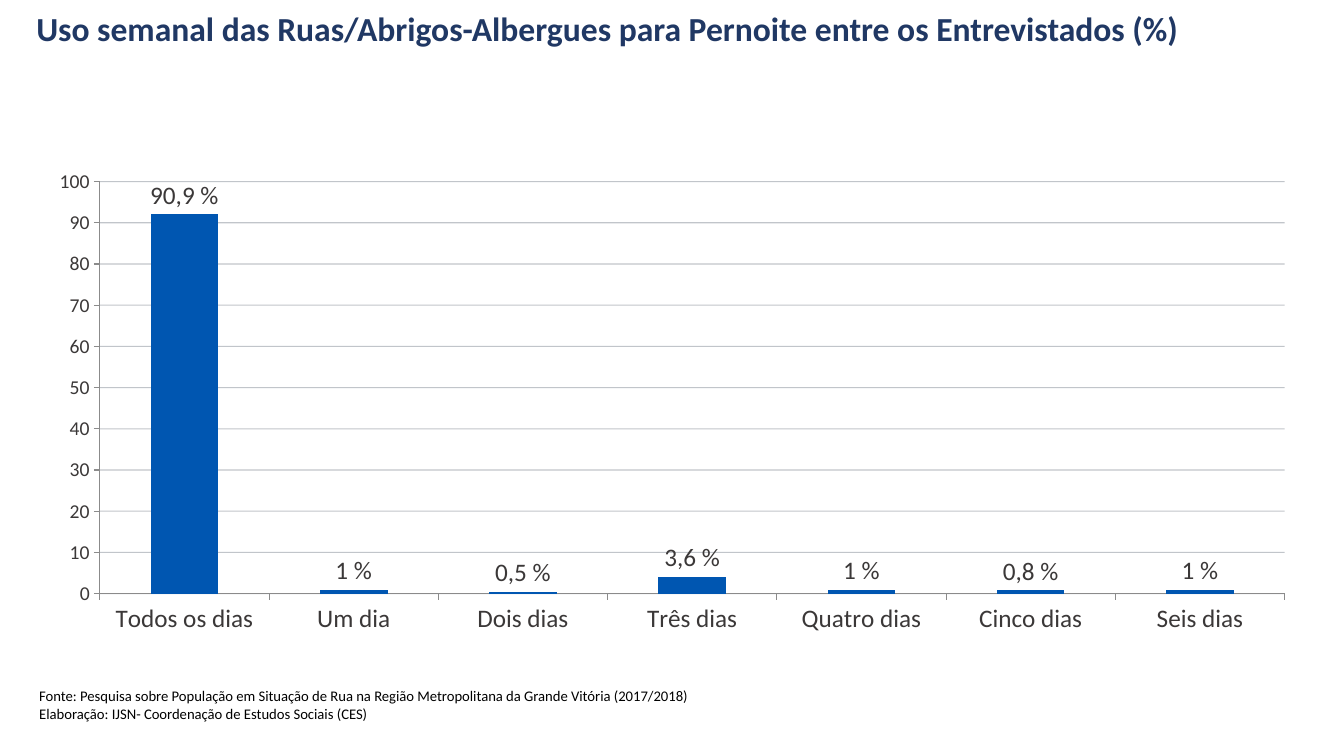
from lxml import etree
from pptx import Presentation
from pptx.chart.data import CategoryChartData
from pptx.dml.color import RGBColor
from pptx.enum.chart import XL_CHART_TYPE, XL_LABEL_POSITION, XL_TICK_MARK
from pptx.enum.text import MSO_ANCHOR, PP_ALIGN
from pptx.oxml import parse_xml
from pptx.oxml.ns import nsdecls, qn
from pptx.util import Cm, Pt

COLUMN_CLUSTERED = XL_CHART_TYPE.COLUMN_CLUSTERED
OUTSIDE_END = XL_LABEL_POSITION.OUTSIDE_END
TICK_OUTSIDE = XL_TICK_MARK.OUTSIDE
TICK_NONE = XL_TICK_MARK.NONE
ANCHOR_MIDDLE = MSO_ANCHOR.MIDDLE
ANCHOR_BOTTOM = MSO_ANCHOR.BOTTOM
ALIGN_LEFT = PP_ALIGN.LEFT

FONT_NAME = "Calibri"
NAVY = "203864"
BLUE = "0056B1"
BLACK = "000000"
DARK_GRAY = "3B3838"
AXIS_GRAY = "8B8B8B"
GRID_SLATE = "333F50"

DAYS = [
    ("Todos os dias", 92, "90,9 %"),
    ("Um dia", 1, "1 %"),
    ("Dois dias", 0.5, "0,5 %"),
    ("Três dias", 4, "3,6 %"),
    ("Quatro dias", 1, "1 %"),
    ("Cinco dias", 0.8, "0,8 %"),
    ("Seis dias", 1, "1 %"),
]
SOURCE_LINES = [
    "Fonte: Pesquisa sobre População em Situação de Rua na Região Metropolitana da Grande Vitória (2017/2018)",
    "Elaboração: IJSN- Coordenação de Estudos Sociais (CES)",
]
PLOT_LAYOUT = {"x": 0.052, "y": 0.044, "w": 0.927, "h": 0.852}


def color(hex_value):
    return RGBColor.from_string(hex_value)


def format_font(font, size, hex_value, bold=False):
    font.name = FONT_NAME
    font.size = Pt(size)
    font.bold = bold
    font.color.rgb = color(hex_value)


presentation = Presentation()
presentation.slide_width = Cm(33.87)
presentation.slide_height = Cm(19.05)
slide = presentation.slides.add_slide(presentation.slide_layouts[5])

title = slide.shapes.title
title.left, title.top, title.width, title.height = Cm(0.66), Cm(0.02), Cm(32.31), Cm(1.57)
title.text_frame.text = "Uso semanal das Ruas/Abrigos-Albergues para Pernoite entre os Entrevistados (%)"
title.text_frame.vertical_anchor = ANCHOR_MIDDLE
title_paragraph = title.text_frame.paragraphs[0]
title_paragraph.alignment = ALIGN_LEFT
title_paragraph.line_spacing = 0.8
format_font(title_paragraph.runs[0].font, 24, NAVY, True)

chart_data = CategoryChartData()
chart_data.categories = [day for day, value, label in DAYS]
chart_data.add_series("Series 1", [value for day, value, label in DAYS])
chart = slide.shapes.add_chart(
    COLUMN_CLUSTERED, Cm(0.84), Cm(4.04), Cm(32.21), Cm(12.19), chart_data
).chart
chart.has_legend = False
chart.has_title = False
format_font(chart.font, 18, BLACK)

category_axis = chart.category_axis
value_axis = chart.value_axis
for axis, size in ((category_axis, 18), (value_axis, 14)):
    axis.major_tick_mark = TICK_OUTSIDE
    axis.minor_tick_mark = TICK_NONE
    axis.format.line.color.rgb = color(AXIS_GRAY)
    axis.format.line.width = Pt(0.75)
    format_font(axis.tick_labels.font, size, DARK_GRAY)
value_axis.minimum_scale = 0
value_axis.maximum_scale = 100
value_axis.major_unit = 10
value_axis.has_major_gridlines = True
grid_line = value_axis.major_gridlines.format.line
grid_line.color.rgb = color(GRID_SLATE)
grid_line.width = Pt(0.75)
for grid_color in value_axis._element.find(qn("c:majorGridlines")).iter(qn("a:srgbClr")):
    etree.SubElement(grid_color, qn("a:alpha")).set("val", "29000")

plot = chart.plots[0]
plot.gap_width = 150
plot.vary_by_categories = False
series = plot.series[0]
series.format.fill.solid()
series.format.fill.fore_color.rgb = color(BLUE)
for index, (day, value, label) in enumerate(DAYS):
    data_label = series.points[index].data_label
    data_label.text_frame.text = label
    data_label.position = OUTSIDE_END
    format_font(data_label.text_frame.paragraphs[0].runs[0].font, 18, DARK_GRAY)

plot_area = chart.element.chart.plotArea
for old_layout in plot_area.findall(qn("c:layout")):
    plot_area.remove(old_layout)
layout = parse_xml(
    f"<c:layout {nsdecls('c')}><c:manualLayout>"
    '<c:layoutTarget val="inner"/><c:xMode val="edge"/><c:yMode val="edge"/>'
    "</c:manualLayout></c:layout>"
)
for name, fraction in PLOT_LAYOUT.items():
    etree.SubElement(layout[0], qn(f"c:{name}")).set("val", str(fraction))
plot_area.insert(0, layout)

source_box = slide.shapes.add_textbox(Cm(0.74), Cm(16.86), Cm(32.31), Cm(1.47))
source_frame = source_box.text_frame
source_frame.word_wrap = True
source_frame.vertical_anchor = ANCHOR_BOTTOM
source_frame.text = "\n".join(SOURCE_LINES)
for paragraph in source_frame.paragraphs:
    format_font(paragraph.runs[0].font, 10.5, BLACK)

presentation.save("out.pptx")
